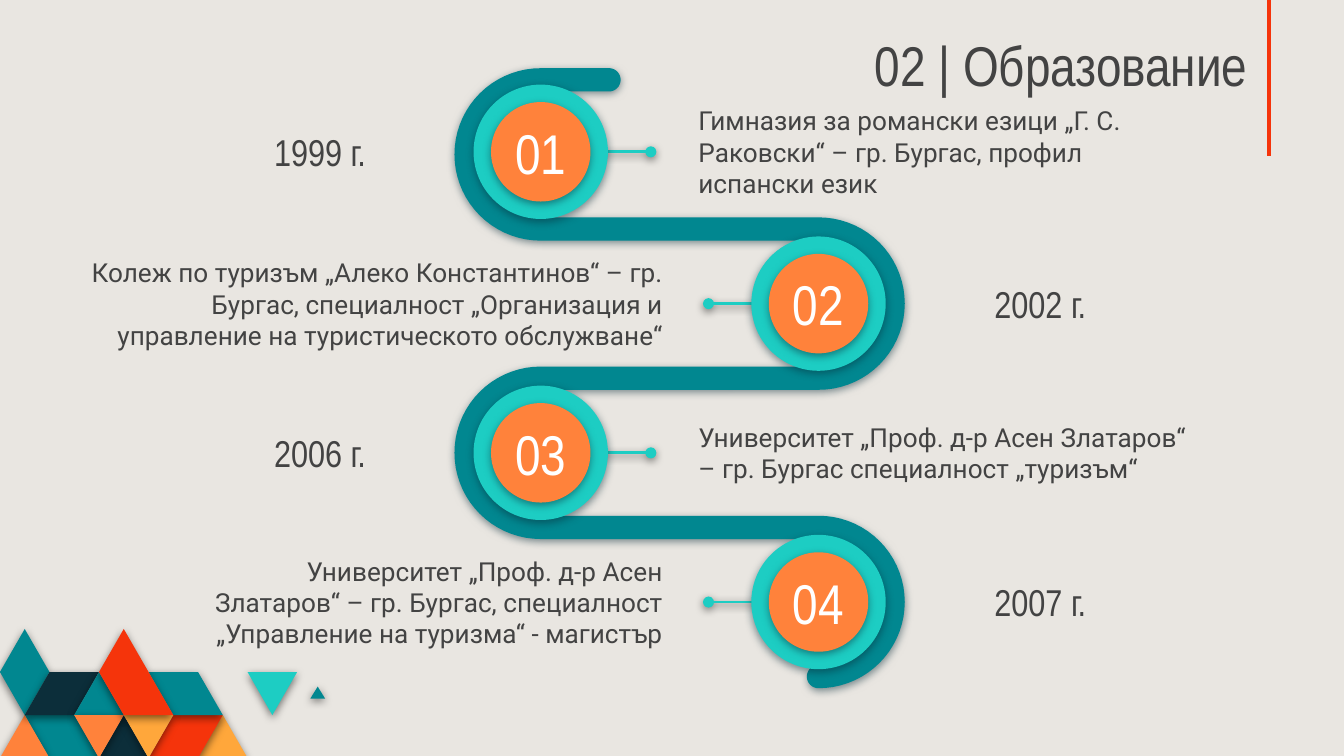
"""Build the education timeline slide."""
import math
from dataclasses import dataclass

import pptx
import pptx.dml.color
import pptx.enum.dml
import pptx.enum.shapes
import pptx.enum.text
import pptx.oxml
import pptx.oxml.ns
import pptx.util

Cm = pptx.util.Cm
Align = pptx.enum.text.PP_ALIGN
Point = tuple[float, float]


@dataclass(frozen=True)
class Theme:
    background: str = "E9E6E1"
    text: str = "434343"
    white: str = "FFFFFF"
    black: str = "000000"
    navy: str = "0C2E3A"
    teal: str = "018790"
    aqua: str = "1DCDC3"
    orange: str = "FF823B"
    amber: str = "FFA73B"
    red: str = "F5340B"
    heading_font: str = "Arial Narrow"
    body_font: str = "Roboto"
    title_size: int = 30
    year_size: int = 20
    body_size: int = 14


@dataclass(frozen=True)
class Milestone:
    number: str
    year: str
    text: str
    y: float
    on_left: bool
    text_left: float
    text_width: float


@dataclass(frozen=True)
class Tile:
    color: str
    corners: tuple[Point, ...]


T = Theme()
LEFT_X, RIGHT_X = 10.22, 15.47
BAND_TOP, BAND_RADIUS, BAND_HALF, BAND_START_X = 1.51, 1.41, 0.22, 11.51
RING, DISC = 2.54, 1.88
TILE_WIDTH, TILE_HEIGHT, TILE_TOP = 0.468, 0.813, 11.89

MILESTONES = (
    Milestone("01", "1999 г.", "Гимназия за романски езици „Г. С. Раковски“ – гр. Бургас, "
              "профил испански език", 2.87, True, 12.95, 10.0),
    Milestone("02", "2002 г.", "Колеж по туризъм „Алеко Константинов“ – гр. Бургас, "
              "специалност „Организация и управление на туристическото обслужване“",
              5.74, False, 0.94, 11.84),
    Milestone("03", "2006 г.", "Университет „Проф. д-р Асен Златаров“ – гр. Бургас "
              "специалност „туризъм“", 8.56, True, 12.95, 10.0),
    Milestone("04", "2007 г.", "Университет „Проф. д-р Асен Златаров“ – гр. Бургас, "
              "специалност „Управление на туризма“ - магистър", 11.38, False, 3.43, 9.35),
)

TILES = (
    Tile(T.amber, ((10, 3), (9, 2), (8, 3))),
    Tile(T.red, ((9, 2), (7, 2), (6, 3), (8, 3))),
    Tile(T.teal, ((4, 3), (3, 2), (1, 2), (2, 3))),
    Tile(T.orange, ((2, 3), (1, 2), (0, 3))),
    Tile(T.navy, ((6, 3), (5, 2), (4, 3))),
    Tile(T.teal, ((9, 2), (8, 1), (6, 1), (7, 2))),
    Tile(T.teal, ((13.13, 1.62), (12.83, 1.34), (12.53, 1.62))),
    Tile(T.aqua, ((12, 1), (10, 1), (11, 2))),
    Tile(T.teal, ((2, 1), (1, 0), (0, 1), (1, 2))),
    Tile(T.navy, ((4, 1), (2, 1), (1, 2), (3, 2))),
    Tile(T.teal, ((5, 2), (4, 1), (3, 2))),
    Tile(T.orange, ((5, 2), (3, 2), (4, 3))),
    Tile(T.amber, ((7, 2), (5, 2), (6, 3))),
    Tile(T.red, ((7, 2), (5, 0), (4, 1), (5, 2))),
)


def rgb(color: str) -> pptx.dml.color.RGBColor:
    """Turn a hex string into a colour."""
    return pptx.dml.color.RGBColor.from_string(color)


def set_effects(shape, shadow: str | None) -> None:
    """Give a shape a soft drop shadow, or none."""
    outer = "" if shadow is None else (
        '<a:outerShdw blurRad="57150" dist="19050" dir="5400000" algn="bl" rotWithShape="0">'
        f'<a:srgbClr val="{shadow}"><a:alpha val="50000"/></a:srgbClr></a:outerShdw>')
    ns = pptx.oxml.ns.nsdecls("a")
    shape._element.spPr.append(pptx.oxml.parse_xml(f"<a:effectLst {ns}>{outer}</a:effectLst>"))


def paint(shape, color: str, shadow: str) -> None:
    """Fill a shape without outline and add its shadow."""
    shape.fill.solid()
    shape.fill.fore_color.rgb = rgb(color)
    shape.line.fill.background()
    set_effects(shape, shadow)


def write(shape, text: str, font: str, size: int, color: str, align: Align) -> None:
    """Set one formatted paragraph, vertically centred."""
    tf = shape.text_frame
    tf.word_wrap = True
    tf.auto_size = pptx.enum.text.MSO_AUTO_SIZE.NONE
    tf.vertical_anchor = pptx.enum.text.MSO_ANCHOR.MIDDLE
    tf.margin_left = tf.margin_right = tf.margin_top = tf.margin_bottom = Cm(0.25)
    p = tf.paragraphs[0]
    p.text = text
    p.alignment = align
    p.font.name = font
    p.font.size = pptx.util.Pt(size)
    p.font.color.rgb = rgb(color)


def add_text(s, left: float, y: float, width: float, height: float, text: str,
             font: str, size: int, align: Align) -> None:
    """Add a text box centred on height y."""
    box = s.shapes.add_textbox(Cm(left), Cm(y - height / 2), Cm(width), Cm(height))
    write(box, text, font, size, T.text, align)


def add_outline(s, points: list[Point], color: str, shadow: str) -> None:
    """Draw a filled closed outline."""
    corners = [(Cm(x), Cm(y)) for x, y in points]
    builder = s.shapes.build_freeform(*corners[0])
    builder.add_line_segments(corners[1:], close=True)
    paint(builder.convert_to_shape(), color, shadow)


def add_line(s, start: Point, end: Point, color: str, width: float):
    """Draw a straight line."""
    line = s.shapes.add_connector(pptx.enum.shapes.MSO_CONNECTOR.STRAIGHT,
                                  Cm(start[0]), Cm(start[1]), Cm(end[0]), Cm(end[1]))
    line.line.color.rgb = rgb(color)
    line.line.width = pptx.util.Pt(width)
    return line


def add_disc(s, x: float, y: float, size: float, color: str):
    """Draw a circle around a centre point."""
    disc = s.shapes.add_shape(pptx.enum.shapes.MSO_SHAPE.OVAL, Cm(x - size / 2),
                              Cm(y - size / 2), Cm(size), Cm(size))
    paint(disc, color, T.navy)
    return disc


def half_circle(x: float, y: float, radius: float, side: int) -> list[Point]:
    """List points from top to bottom, bulging right (1) or left (-1)."""
    angles = [math.radians(a) for a in range(-90, 91, 5)]
    return [(x + side * radius * math.cos(a), y + radius * math.sin(a)) for a in angles]


def band_edge(side: int) -> list[Point]:
    """List one edge of the winding band from start to end."""
    points = [(BAND_START_X, BAND_TOP - side * BAND_HALF)]
    for i, m in enumerate(MILESTONES):
        turn = -1 if m.on_left else 1
        points += half_circle(LEFT_X if m.on_left else RIGHT_X,
                              BAND_TOP + (2 * i + 1) * BAND_RADIUS,
                              BAND_RADIUS - turn * side * BAND_HALF, turn)
    return points


def add_band(s) -> None:
    """Draw the winding band with round ends."""
    bottom = BAND_TOP + 2 * len(MILESTONES) * BAND_RADIUS
    points = (band_edge(1) + half_circle(RIGHT_X, bottom, BAND_HALF, -1)
              + band_edge(-1)[::-1] + half_circle(BAND_START_X, BAND_TOP, BAND_HALF, 1)[::-1])
    add_outline(s, points, T.teal, T.navy)


def add_pointer(s, m: Milestone) -> None:
    """Draw the dotted pointer from a milestone towards its text."""
    x, side = (LEFT_X, 1) if m.on_left else (RIGHT_X, -1)
    line = add_line(s, (x + side * 0.84, m.y), (x + side * 2.08, m.y), T.aqua, 1.5)
    ns = pptx.oxml.ns.nsdecls("a")
    line.line._get_or_add_ln().append(pptx.oxml.parse_xml(f'<a:tailEnd {ns} type="oval"/>'))
    set_effects(line, T.black)


def add_milestone(s, m: Milestone) -> None:
    """Draw the numbered circle, year and description."""
    x = LEFT_X if m.on_left else RIGHT_X
    add_disc(s, x, m.y, RING, T.aqua)
    disc = add_disc(s, x, m.y, DISC, T.orange)
    write(disc, m.number, T.heading_font, T.title_size, T.white, Align.CENTER)
    disc.text_frame.margin_left = disc.text_frame.margin_right = 0
    align = Align.LEFT if m.on_left else Align.RIGHT
    add_text(s, m.text_left, m.y, m.text_width, 1.47, m.text, T.body_font, T.body_size, align)
    add_text(s, 4.93 if m.on_left else 17.07, m.y, 3.71, 1.09, m.year,
             T.heading_font, T.year_size, align)


def main() -> None:
    """Build and save the slide."""
    prs = pptx.Presentation()
    prs.slide_width, prs.slide_height = Cm(25.4), Cm(14.29)
    s = prs.slides.add_slide(prs.slide_layouts[5])
    s.background.fill.solid()
    s.background.fill.fore_color.rgb = rgb(T.background)

    title = s.shapes.title
    title.left, title.top, title.width, title.height = Cm(13.31), Cm(0.48), Cm(10.52), Cm(1.6)
    write(title, "02 | Образование", T.heading_font, T.title_size, T.text, Align.RIGHT)
    title.text_frame.vertical_anchor = pptx.enum.text.MSO_ANCHOR.BOTTOM
    title.text_frame.paragraphs[0].line_spacing = 0.8

    set_effects(add_line(s, (23.98, 0), (23.98, 2.95), T.red, 2.25), None)
    for tile in TILES:
        add_outline(s, [(c * TILE_WIDTH, TILE_TOP + r * TILE_HEIGHT) for c, r in tile.corners],
                    tile.color, T.black)
    for m in MILESTONES:
        add_pointer(s, m)
    add_band(s)
    for m in MILESTONES:
        add_milestone(s, m)
    prs.save("out.pptx")


if __name__ == "__main__":
    main()
